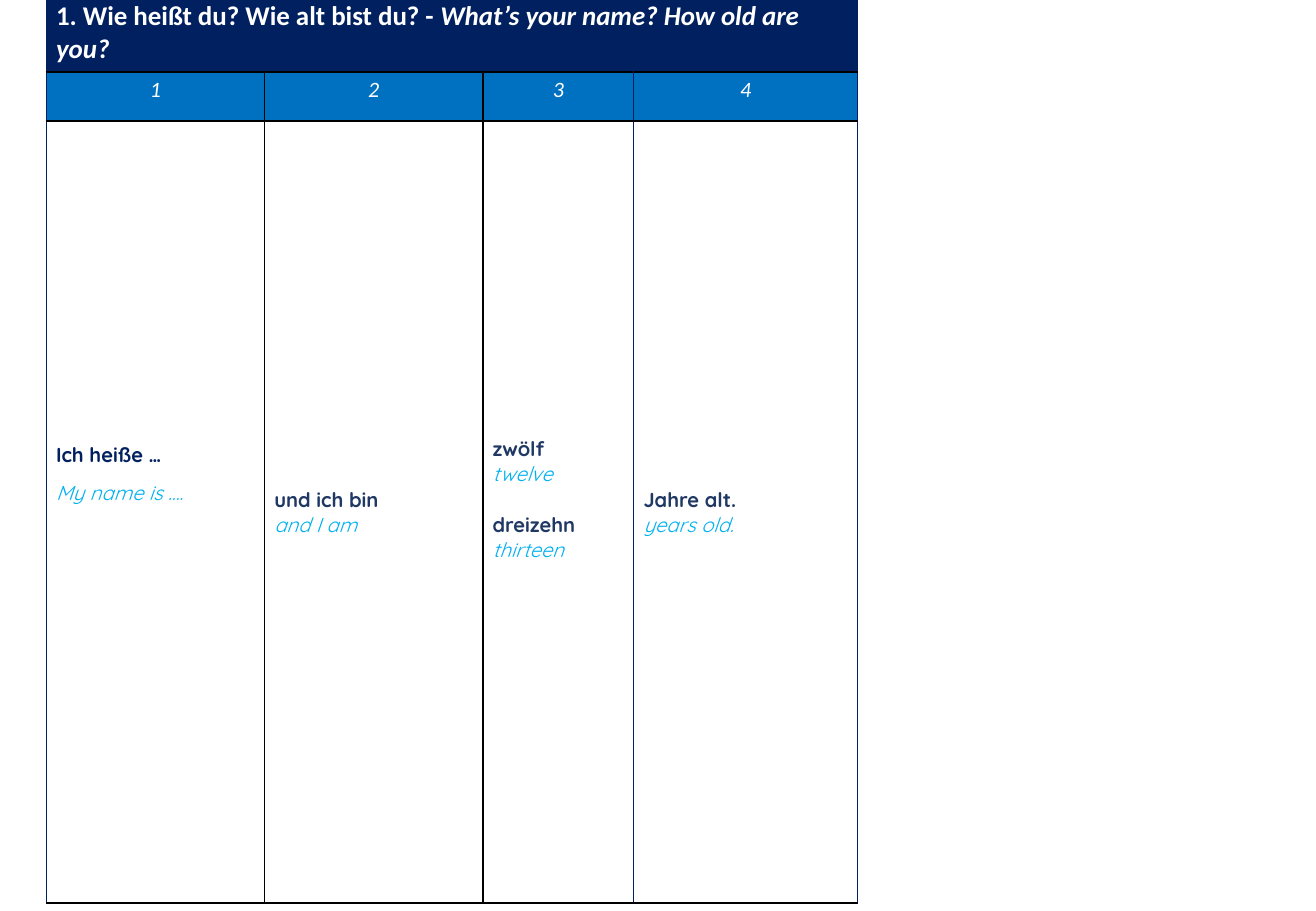
from lxml import etree
from pptx import Presentation
from pptx.dml.color import RGBColor
from pptx.enum import text as t
from pptx.oxml import ns
from pptx.util import Pt

NAVY = RGBColor(0x00, 0x20, 0x60)
BLUE = RGBColor(0x00, 0x70, 0xC0)
SKY = RGBColor(0x00, 0xB0, 0xF0)
SLATE = RGBColor(0x20, 0x38, 0x64)
WHITE = RGBColor(0xFF, 0xFF, 0xFF)
BLACK = RGBColor(0x00, 0x00, 0x00)

COLS = [129.4, 129.4, 89.5, 132.7]
ROWS = [39.6, 29, 463.6]
EDGES = [NAVY, BLACK, BLACK, NAVY, NAVY]  # vertical rules, left to right

# Per column: German and English pairs, German colour, line spacing, extra bottom inset
WORDS = [
    ([("Ich heiße …", "My name is ….")], NAVY, 1.5, 52.5),
    ([("und ich bin", "and I am")], SLATE, 1, 0),
    ([("zwölf", "twelve"), ("dreizehn", "thirteen")], SLATE, 1, 15),
    ([("Jahre alt.", "years old.")], SLATE, 1, 0),
]


def add_run(para, words, font, size, color, bold=False, italic=False):
    run = para.add_run()
    run.text = words
    face = run.font
    face.name, face.size = font, Pt(size)
    face.bold, face.italic = bold, italic
    face.color.rgb = color


def set_edges(cell, left, right, top, low=BLACK):
    props = cell._tc.get_or_add_tcPr()
    for side, color in zip("LRTB", (left, right, top, low)):
        line = etree.SubElement(props, ns.qn(f"a:ln{side}"), w=str(Pt(1)))
        fill = etree.SubElement(line, ns.qn("a:solidFill"))
        etree.SubElement(fill, ns.qn("a:srgbClr"), val=str(color))


def set_cell(cell, edges, color=None, inset=2.9, extra=0, middle=True):
    set_edges(cell, *edges)
    if color is None:
        cell.fill.background()
    else:
        cell.fill.solid()
        cell.fill.fore_color.rgb = color
    cell.margin_left = cell.margin_right = Pt(5.8)
    cell.margin_top, cell.margin_bottom = Pt(inset), Pt(inset + extra)
    cell.vertical_anchor = t.MSO_ANCHOR.MIDDLE if middle else t.MSO_ANCHOR.TOP


def add_head(grid):
    # Question across all columns
    for col in range(len(COLS)):
        set_cell(grid.cell(0, col), (NAVY, NAVY, NAVY), NAVY, 3.6)
    cell = grid.cell(0, 0)
    cell.merge(grid.cell(0, len(COLS) - 1))
    para = cell.text_frame.paragraphs[0]
    add_run(para, "1. Wie heißt du? Wie alt bist du? - ", "Calibri", 16, WHITE, bold=True)
    add_run(para, "What’s your name? How old are you?", "Calibri", 16, WHITE, True, True)


def add_words(cell, pairs, color, space):
    frame = cell.text_frame
    para = frame.paragraphs[0]
    for num, (german, english) in enumerate(pairs):
        if num:
            para = frame.add_paragraph()
            para.space_before = Pt(15)
        para.line_spacing = space
        add_run(para, german, "Quicksand", 12, color, bold=True)
        para = frame.add_paragraph()
        para.line_spacing = space
        add_run(para, english, "Quicksand", 12, SKY, italic=True)


def add_grid(slide, left, top, width, height):
    frame = slide.shapes.add_table(len(ROWS), len(COLS), Pt(left), Pt(top), Pt(width), Pt(height))
    grid = frame.table
    grid.first_row = grid.horz_banding = False
    for col, size in zip(grid.columns, COLS):
        col.width = Pt(size)
    for row, size in zip(grid.rows, ROWS):
        row.height = Pt(size)
    add_head(grid)
    for col, (pairs, color, space, extra) in enumerate(WORDS):
        edges = EDGES[col], EDGES[col + 1], BLACK
        # Column number
        cell = grid.cell(1, col)
        set_cell(cell, edges, BLUE, middle=False)
        para = cell.text_frame.paragraphs[0]
        para.alignment = t.PP_ALIGN.CENTER
        add_run(para, str(col + 1), "Calibri", 13, WHITE, italic=True)
        # Sentence parts
        cell = grid.cell(2, col)
        set_cell(cell, edges, extra=extra)
        add_words(cell, pairs, color, space)


def main():
    deck = Presentation()
    deck.slide_width, deck.slide_height = Pt(780), Pt(540)
    slide = deck.slides.add_slide(deck.slide_layouts[6])
    add_grid(slide, 27.4, -3.6, sum(COLS), sum(ROWS))
    deck.save("out.pptx")


if __name__ == "__main__":
    main()
